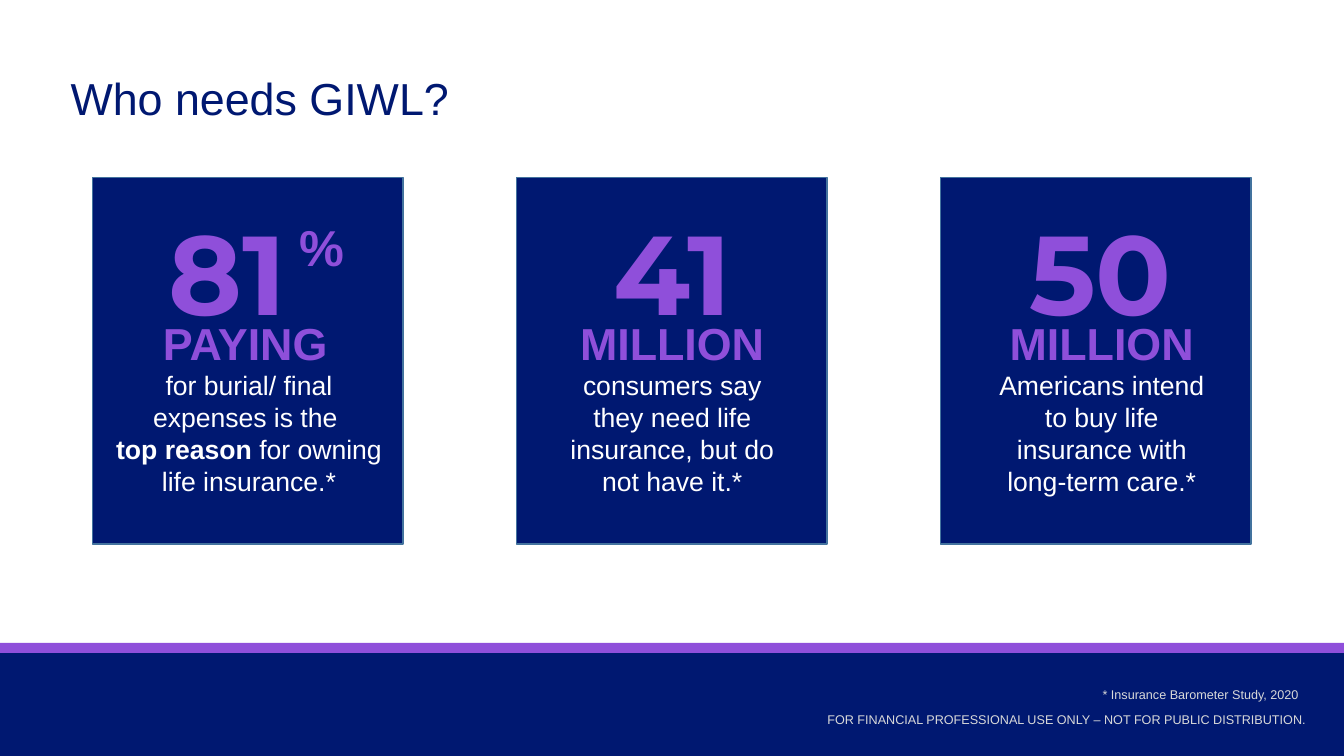
from pptx import Presentation
from pptx.dml.color import RGBColor
from pptx.enum.shapes import MSO_SHAPE as Shape
from pptx.enum.text import MSO_ANCHOR as Anchor, PP_ALIGN as Align
from pptx.util import Pt

COLORS = {
    "navy": "001871",
    "purple": "8F4FDA",
    "border": "43739E",
    "white": "FFFFFF",
    "gray": "D9D9D9",
}
BREAK = "\v"


class SlideBuilder:
    font = "Arial"
    inset = (7.2, 3.6, 7.2, 3.6)

    def __init__(self, slide):
        self.slide = slide
        self.shapes = slide.shapes

    def color(self, name):
        return RGBColor.from_string(COLORS[name])

    def start_group(self):
        self.shapes = self.slide.shapes.add_group_shape().shapes

    def rectangle(self, left, top, width, height, fill, line=None):
        box = self.shapes.add_shape(Shape.RECTANGLE, Pt(left), Pt(top), Pt(width), Pt(height))
        box.shadow.inherit = False
        box.fill.solid()
        box.fill.fore_color.rgb = self.color(fill)
        if line:
            box.line.color.rgb = self.color(line)
            box.line.width = Pt(1)
        else:
            box.line.fill.background()

    def text(self, left, top, width, height, paragraphs, align=Align.LEFT,
             anchor=Anchor.TOP, inset=inset, wrap=True, spacing=None):
        frame = self.shapes.add_textbox(Pt(left), Pt(top), Pt(width), Pt(height)).text_frame
        frame.word_wrap = wrap
        frame.vertical_anchor = anchor
        frame.margin_left, frame.margin_top, frame.margin_right, frame.margin_bottom = map(Pt, inset)
        for index, runs in enumerate(paragraphs):
            paragraph = frame.add_paragraph() if index else frame.paragraphs[0]
            paragraph.alignment = align
            if spacing:
                paragraph.line_spacing = spacing
            for run in runs:
                self.run(paragraph, *run)

    def run(self, paragraph, words, size, color, bold=False, font=font):
        if words == BREAK:
            paragraph.add_line_break()
            return
        run = paragraph.add_run()
        run.text = words
        run.font.name = font
        run.font.size = Pt(size)
        run.font.bold = bold
        run.font.color.rgb = self.color(color)

    def card(self, left, figure, figure_box, message, message_box, figure_inset=inset):
        self.start_group()
        self.rectangle(left, 126.7, 221.8, 262, "navy", "border")
        message_left, message_width = message_box
        self.text(message_left, 221.8, message_width, 138.2, message, Align.CENTER)
        figure_left, figure_width = figure_box
        self.text(figure_left, 141.8, figure_width, 104.4,
                  [[(figure, 80, "purple", True, "Montserrat")]],
                  Align.CENTER, inset=figure_inset)


def heading(words):
    return words, 32, "purple", True


def body(words, bold=False):
    return words, 19, "white", bold


def main():
    deck = Presentation()
    deck.slide_width, deck.slide_height = Pt(960), Pt(540)
    builder = SlideBuilder(deck.slides.add_slide(deck.slide_layouts[6]))
    flush = (0, 0, 0, 0)

    builder.rectangle(0, 465, 960, 75, "navy")
    builder.text(138.2, 508.3, 794.2, 13,
                 [[("FOR FINANCIAL PROFESSIONAL USE ONLY – NOT FOR PUBLIC DISTRIBUTION.", 9, "gray")]],
                 Align.RIGHT, inset=flush)
    builder.rectangle(0, 459.2, 960, 7.2, "purple")
    builder.text(50.4, 36, 842.4, 72, [[("Who needs GIWL?", 32, "navy")]],
                 anchor=Anchor.MIDDLE, inset=flush, spacing=0.9)
    builder.text(780.5, 487.4, 156.2, 18,
                 [[("* Insurance Barometer Study, 2020", 9, "gray")]], wrap=False)

    paying, consumers, americans = [66.2 + 302.8 * column for column in range(3)]
    line_break = (BREAK, 19, "white")
    builder.card(consumers, "41", (390.2, 180),
                 [[heading("MILLION")],
                  [body("consumers say they need life insurance, but do not have it.*")]],
                 (390.2, 180))
    builder.card(americans, "50", (696.2, 180),
                 [[heading("MILLION")],
                  [body("Americans intend to buy life insurance with long-term care.*")]],
                 (697, 180))
    builder.card(paying, "81", (79.9, 194.4),
                 [[heading("PAYING"), body(" "), line_break,
                   body("for burial/ final expenses is the "), line_break,
                   body("top reason ", True), body("for owning life insurance.*")]],
                 (71.3, 213.1), figure_inset=(7.2, 3.6, 36, 3.6))
    builder.text(206.6, 150.5, 70.6, 51.1, [[("%", 36, "purple", True)]])

    deck.save("out.pptx")


if __name__ == "__main__":
    main()
